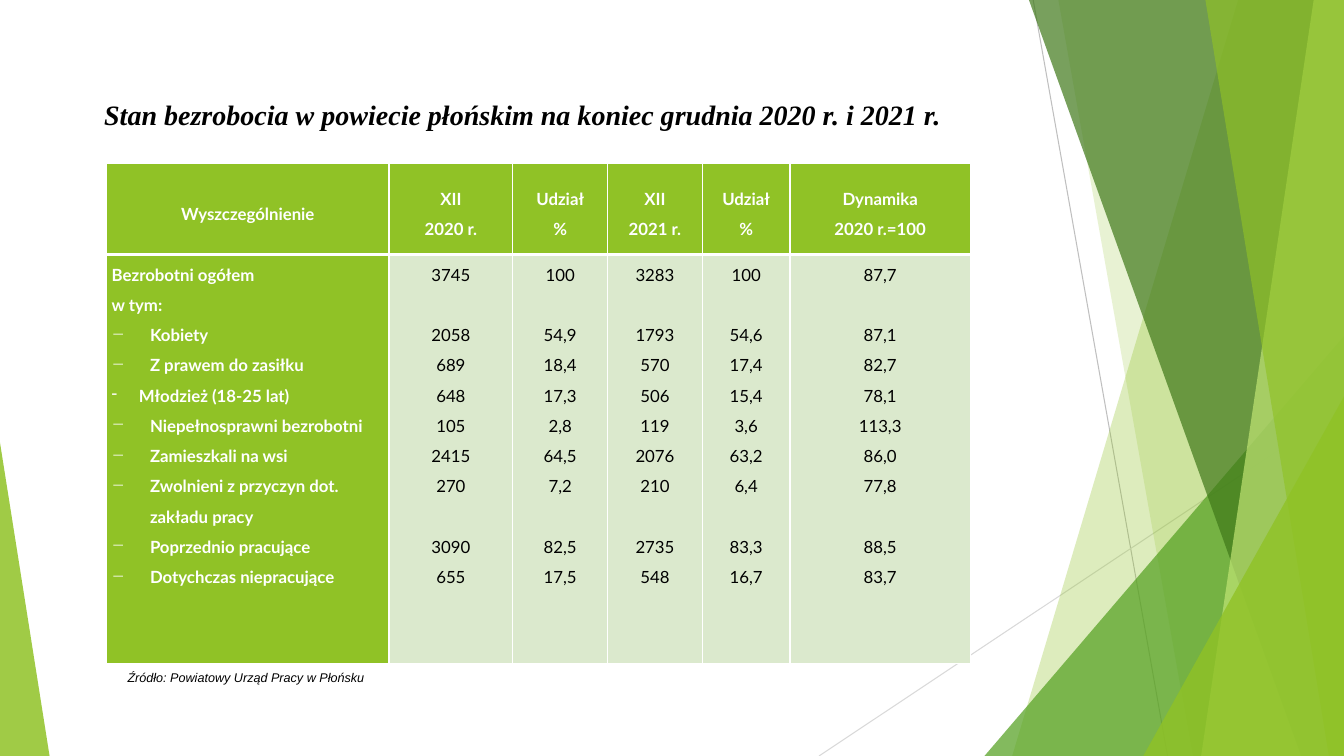
from dataclasses import dataclass

from lxml.etree import SubElement
from pptx import Presentation
from pptx.dml.color import RGBColor
from pptx.enum.shapes import MSO_CONNECTOR, MSO_SHAPE
from pptx.enum.text import MSO_ANCHOR, MSO_AUTO_SIZE, PP_ALIGN
from pptx.oxml.ns import qn
from pptx.shapes.autoshape import Shape
from pptx.slide import Slide
from pptx.table import _Cell
from pptx.text.text import _Paragraph
from pptx.util import Emu, Inches, Pt

COLUMNS, ROWS = 160, 90
UNIT = Inches(1) // 12
COLORS = {
    "lime": "90C226", "green": "54A021", "forest": "3F7819", "pale": "C0E474",
    "mint": "DBE9CD", "white": "FFFFFF", "black": "000000",
    "gray": "BFBFBF", "silver": "D9D9D9",
}


@dataclass(frozen=True)
class Ray:
    start: tuple[float, float]
    end: tuple[float, float]
    color: str


@dataclass(frozen=True)
class Blade:
    top_left: float
    bottom_left: float
    color: str
    opacity: int


@dataclass(frozen=True)
class Wedge:
    left: float
    top: float
    width: float
    apex: float
    color: str
    opacity: int


@dataclass(frozen=True)
class Record:
    label: str
    values: tuple[str, ...]
    bullet: str = "−"
    indent: float = 0.38
    gap: float = 0


DECORATIONS = [
    Ray((123, 0), (139, 90), "gray"),
    Ray((160, 48.4), (97.5, 90), "silver"),
    Blade(147.4, 120.5, "lime", 30),
    Blade(126, 142, "lime", 20),
    Wedge(117.2, 40, 42.8, 1, "green", 72),
    Blade(122.5, 154.9, "forest", 70),
    Blade(156.4, 143, "pale", 70),
    Blade(143.5, 158.2, "lime", 65),
    Wedge(136.1, 47.2, 23.9, 1, "lime", 80),
    Wedge(0, 52.7, 5.9, 0, "lime", 85),
]
HEADERS = [
    ("Wyszczególnienie",), ("XII", "2020 r."), ("Udział", "%"),
    ("XII", "2021 r."), ("Udział", "%"), ("Dynamika", "2020 r.=100"),
]
COLUMN_WIDTHS = [33.6, 14.76, 11.28, 11.28, 10.44, 21.48]
ROW_HEIGHTS = [10.9, 48.7]
LINE_PITCH = 21.6
RECORDS = [
    Record("Bezrobotni ogółem", ("3745", "100", "3283", "100", "87,7"), ""),
    Record("w tym:", (), ""),
    Record("Kobiety", ("2058", "54,9", "1793", "54,6", "87,1"), gap=LINE_PITCH),
    Record("Z prawem do zasiłku", ("689", "18,4", "570", "17,4", "82,7")),
    Record("Młodzież (18-25 lat)", ("648", "17,3", "506", "15,4", "78,1"), "-", 0.27),
    Record("Niepełnosprawni bezrobotni", ("105", "2,8", "119", "3,6", "113,3")),
    Record("Zamieszkali na wsi", ("2415", "64,5", "2076", "63,2", "86,0")),
    Record("Zwolnieni z przyczyn dot. zakładu pracy", ("270", "7,2", "210", "6,4", "77,8")),
    Record("Poprzednio pracujące", ("3090", "82,5", "2735", "83,3", "88,5"), gap=LINE_PITCH),
    Record("Dotychczas niepracujące", ("655", "17,5", "548", "16,7", "83,7")),
]


def grid(count: float) -> Emu:
    return Emu(round(count * UNIT))


def rgb(name: str) -> RGBColor:
    return RGBColor.from_string(COLORS[name])


def paint(shape: Shape, color: str, opacity: int) -> None:
    shape.shadow.inherit = False
    shape.line.fill.background()
    shape.fill.solid()
    shape.fill.fore_color.rgb = rgb(color)
    color_element = shape.fill._xPr.find(qn("a:solidFill"))[0]
    SubElement(color_element, qn("a:alpha"), val=str(opacity * 1000))


def draw_ray(slide: Slide, ray: Ray) -> None:
    line = slide.shapes.add_connector(
        MSO_CONNECTOR.STRAIGHT, *map(grid, ray.start + ray.end))
    line.line.color.rgb = rgb(ray.color)
    line.line.width = Pt(0.75)
    SubElement(line._element.spPr, qn("a:effectLst"))


def draw_blade(slide: Slide, blade: Blade) -> None:
    outline = slide.shapes.build_freeform(grid(blade.top_left), 0)
    corners = [(COLUMNS, 0), (COLUMNS, ROWS), (blade.bottom_left, ROWS)]
    outline.add_line_segments([(grid(x), grid(y)) for x, y in corners], close=True)
    paint(outline.convert_to_shape(), blade.color, blade.opacity)


def draw_wedge(slide: Slide, wedge: Wedge) -> None:
    box = (wedge.left, wedge.top, wedge.width, ROWS - wedge.top)
    shape = slide.shapes.add_shape(MSO_SHAPE.ISOSCELES_TRIANGLE, *map(grid, box))
    shape.adjustments[0] = wedge.apex
    paint(shape, wedge.color, wedge.opacity)


def set_font(paragraph: _Paragraph, name: str, size: float, color: str,
             bold: bool = False, italic: bool = False) -> None:
    font = paragraph.font
    font.name, font.size = name, Pt(size)
    font.bold, font.italic = bold, italic
    font.color.rgb = rgb(color)


def add_bullet(paragraph: _Paragraph, character: str, indent: float) -> None:
    properties = paragraph._p.get_or_add_pPr()
    properties.set("marL", str(Inches(indent)))
    properties.set("indent", str(-Inches(indent)))
    SubElement(properties, qn("a:buChar"), char=character)


def format_cell(cell: _Cell, fill: str, top: float, bottom: float) -> None:
    cell.margin_left = cell.margin_right = Inches(0.05)
    cell.margin_top = cell.margin_bottom = 0
    properties = cell._tc.get_or_add_tcPr()
    for side, width in (("L", 1), ("R", 1), ("T", top), ("B", bottom)):
        border = SubElement(properties, qn(f"a:ln{side}"), w=str(Pt(width)))
        border_fill = SubElement(border, qn("a:solidFill"))
        SubElement(border_fill, qn("a:srgbClr"), val=COLORS["white"])
    cell.fill.solid()
    cell.fill.fore_color.rgb = rgb(fill)


def write_cell(cell: _Cell, records: list[Record], color: str, bold: bool,
               alignment: PP_ALIGN) -> None:
    frame = cell.text_frame
    for index, record in enumerate(records):
        paragraph = frame.add_paragraph() if index else frame.paragraphs[0]
        paragraph.text = record.label
        paragraph.alignment = alignment
        paragraph.line_spacing = 1.5
        paragraph.space_before = Pt(record.gap)
        if record.bullet:
            add_bullet(paragraph, record.bullet, record.indent)
        set_font(paragraph, "Lato", 12, color, bold)


def draw_table(slide: Slide) -> None:
    box = (12.7, 19.4, sum(COLUMN_WIDTHS), sum(ROW_HEIGHTS))
    table = slide.shapes.add_table(2, len(HEADERS), *map(grid, box)).table
    table.horz_banding = False
    for row, height in zip(table.rows, ROW_HEIGHTS):
        row.height = grid(height)
    for index, (header, width) in enumerate(zip(HEADERS, COLUMN_WIDTHS)):
        table.columns[index].width = grid(width)
        head, body = table.cell(0, index), table.cell(1, index)
        format_cell(head, "lime", 1, 3)
        head.vertical_anchor = MSO_ANCHOR.MIDDLE
        lines = [Record(text, (), "") for text in header]
        write_cell(head, lines, "white", True, PP_ALIGN.CENTER)
        format_cell(body, "mint" if index else "lime", 3, 1)
        if index:
            values = [Record(record.values[index - 1], (), "", gap=record.gap)
                      for record in RECORDS if record.values]
            write_cell(body, values, "black", False, PP_ALIGN.CENTER)
        else:
            labels = [Record(record.label, (), record.bullet, record.indent)
                      for record in RECORDS]
            write_cell(body, labels, "white", True, PP_ALIGN.LEFT)


def write_title(slide: Slide) -> None:
    title = slide.shapes.title
    title.left, title.top, title.width, title.height = map(grid, (11.2, 7.8, 112.8, 17.3))
    frame = title.text_frame
    frame.text = "Stan bezrobocia w powiecie płońskim na koniec grudnia 2020 r. i 2021 r."
    frame.auto_size = MSO_AUTO_SIZE.NONE
    frame.vertical_anchor = MSO_ANCHOR.TOP
    frame.margin_top = Inches(0.32)
    frame.paragraphs[0].alignment = PP_ALIGN.LEFT
    set_font(frame.paragraphs[0], "Times New Roman", 20, "black", True, True)


def write_source(slide: Slide) -> None:
    frame = slide.shapes.add_textbox(*map(grid, (14, 79.2, 42.4, 3))).text_frame
    frame.word_wrap = True
    frame.vertical_anchor = MSO_ANCHOR.MIDDLE
    frame.text = "Źródło: Powiatowy Urząd Pracy w Płońsku"
    frame.paragraphs[0].alignment = PP_ALIGN.JUSTIFY
    set_font(frame.paragraphs[0], "Arial", 9, "black", italic=True)


def main() -> None:
    presentation = Presentation()
    presentation.slide_width, presentation.slide_height = grid(COLUMNS), grid(ROWS)
    slide = presentation.slides.add_slide(presentation.slide_layouts[5])
    painters = {Ray: draw_ray, Blade: draw_blade, Wedge: draw_wedge}
    for decoration in DECORATIONS:
        painters[type(decoration)](slide, decoration)
    write_title(slide)
    draw_table(slide)
    write_source(slide)
    presentation.save("out.pptx")


if __name__ == "__main__":
    main()
